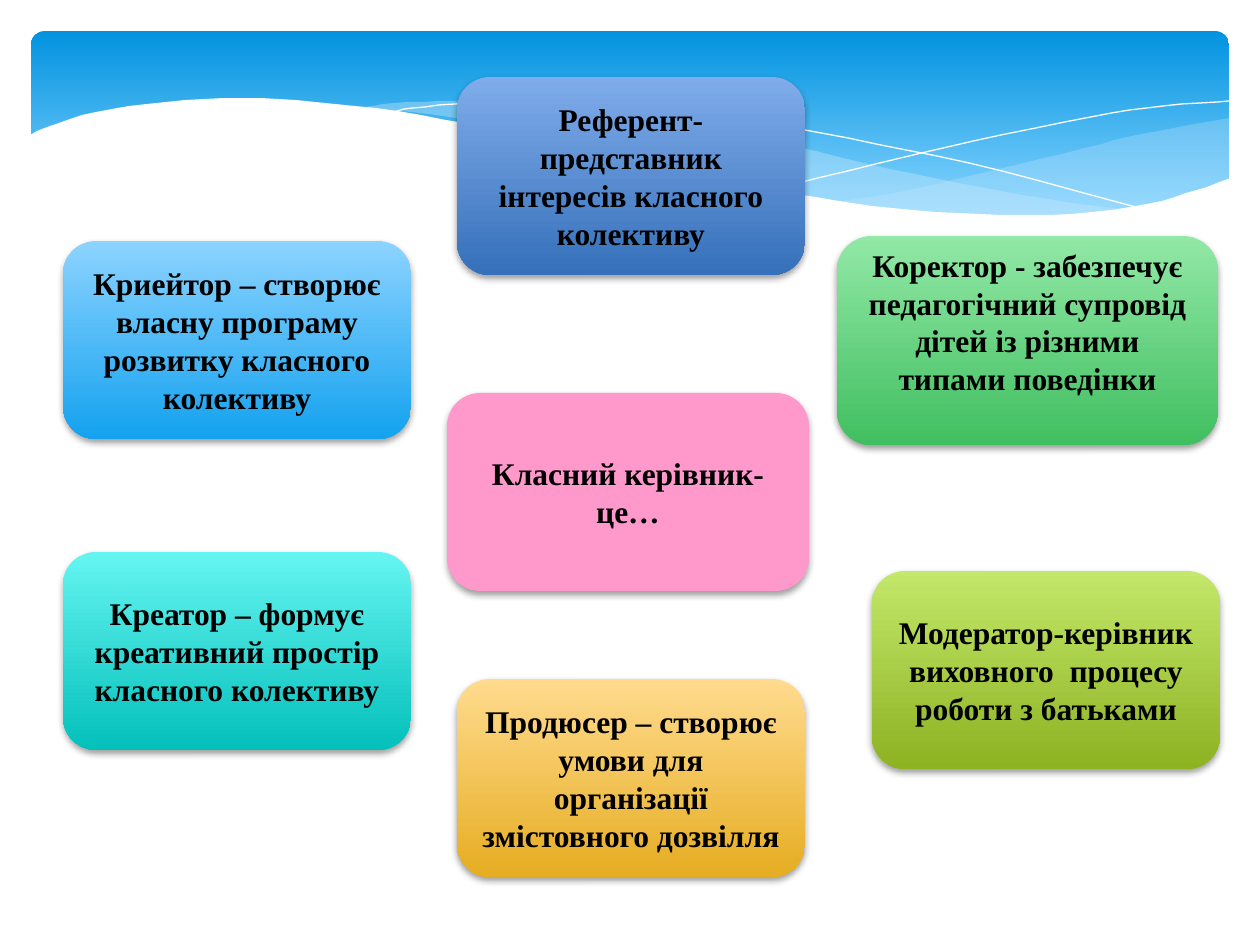
"""Build a slide of six class-teacher roles set around a central card."""
from lxml.etree import SubElement
from pptx import Presentation
from pptx.dml.color import RGBColor as RGB
from pptx.enum.shapes import MSO_SHAPE as SHAPE
from pptx.enum.text import MSO_ANCHOR as ANCHOR, PP_ALIGN as ALIGN
from pptx.oxml.ns import qn
from pptx.util import Pt

PX = 914400 // 126
WIDTH, HEIGHT = 1260, 945
CARD_W, CARD_H = 348, 198
LEFT, MIDDLE = 63, 457
INSET = 6

THEME = {
    "font": {"name": "Times New Roman", "size": Pt(18), "bold": True},
    "text": "000000",
    "white": "FFFFFF",
    "wave": "C6E7FC",
    "sky": ("0293E0", "83D3FE"),
    "blue": ("80ACEA", "3570BA"),
    "green": ("92E8A6", "41BF60"),
    "azure": ("8CD3FF", "14A2EF"),
    "teal": ("65F5F1", "04C0BB"),
    "amber": ("FFDB8E", "E6AD22"),
    "lime": ("C3E86A", "8DB222"),
    "pink": "FF99CC",
}

CARDS = [
    ("Референт-представник інтересів класного колективу",
     (MIDDLE, 77, CARD_W, CARD_H), "blue", INSET),
    ("Коректор - забезпечує педагогічний супровід дітей із різними типами поведінки",
     (837, 236, 381, 209), "green", INSET + 38),
    ("Криейтор – створює власну програму розвитку класного колективу",
     (LEFT, 241, CARD_W, CARD_H), "azure", INSET),
    ("Креатор – формує креативний простір класного колективу",
     (LEFT, 552, CARD_W, CARD_H), "teal", INSET),
    ("Продюсер – створює умови для організації змістовного дозвілля",
     (MIDDLE, 679, CARD_W, CARD_H), "amber", INSET),
    ("Модератор-керівник виховного  процесу роботи з батьками",
     (872, 571, CARD_W, CARD_H), "lime", INSET),
    ("Класний керівник-це…", (447, 393, 362, CARD_H), "pink", INSET),
]

BANNER = (31, 31, 1198, 197)
RIGHT_WAVE = [
    [(1229, 118), (1142, 134), (1085, 148), (982, 173), (889, 194), (833, 202)],
    [(833, 202), (922, 212), (1014, 217), (1100, 215), (1169, 203), (1229, 179)],
]
LONG_WAVE = [
    [(1125, 210), (1017, 194), (890, 169), (793, 146), (699, 126), (616, 112),
     (529, 103), (455, 101), (394, 103), (360, 108)],
    [(360, 108), (456, 118), (566, 146), (668, 170), (757, 188), (857, 206),
     (959, 216), (1043, 218), (1125, 210)],
]
FALLING_LINE = [[(389, 113), (413, 108), (471, 103), (545, 103), (643, 108),
                 (766, 123), (876, 144), (1002, 171), (1143, 209)]]
RISING_LINE = [[(772, 190), (876, 164), (978, 140), (1091, 117), (1164, 106),
                (1229, 101)]]
WHITE_WAVE = [
    [(1231, 178), (1197, 190), (1147, 204), (1071, 214), (980, 214), (892, 208),
     (816, 197), (760, 188), (699, 175), (634, 161), (563, 144), (493, 129),
     (398, 111), (315, 102), (243, 98), (166, 102), (96, 112), (50, 126), (29, 135)],
    [(29, 282), (1231, 282)],
]
WAVES = [
    (RIGHT_WAVE, "wave", 29),
    (LONG_WAVE, "wave", 40),
    (FALLING_LINE, None, None),
    (RISING_LINE, None, None),
    (WHITE_WAVE, "white", 100),
]


def smooth(points, steps=4):
    """Return points along a Catmull-Rom curve through the given ones."""
    ends = [points[0], *points, points[-1]]
    curve = [points[0]]
    for a, b, c, d in zip(ends, ends[1:], ends[2:], ends[3:]):
        for t in (i / steps for i in range(1, steps + 1)):
            curve.append(tuple(
                (2 * q + (r - p) * t + (2 * p - 5 * q + 4 * r - v) * t ** 2
                 + (3 * q - p - 3 * r + v) * t ** 3) / 2
                for p, q, r, v in zip(a, b, c, d)))
    return curve


def paint(sp, colours, last=1.0):
    """Fill a shape with one colour or a downward gradient, without outline."""
    sp.shadow.inherit = False
    sp.line.fill.background()
    if isinstance(colours, str):
        sp.fill.solid()
        sp.fill.fore_color.rgb = RGB.from_string(colours)
        return
    sp.fill.gradient()
    sp.fill.gradient_angle = 270
    for stop, colour, position in zip(sp.fill.gradient_stops, colours, (0, last)):
        stop.color.rgb = RGB.from_string(colour)
        stop.position = position


def add_round_rect(s, box):
    """Add a rounded rectangle at a box given in px."""
    return s.shapes.add_shape(SHAPE.ROUNDED_RECTANGLE, *(v * PX for v in box))


def add_wave(s, curves, colour, opacity):
    """Add a filled wave, or a thin white line when there is no colour."""
    points = [point for curve in curves for point in smooth(curve)]
    builder = s.shapes.build_freeform(*points[0], scale=PX)
    builder.add_line_segments(points[1:], close=colour is not None)
    sp = builder.convert_to_shape()
    if colour:
        paint(sp, THEME[colour])
        rgb = sp.fill._xPr.find(".//" + qn("a:srgbClr"))
        SubElement(rgb, qn("a:alpha"), val=str(opacity * 1000))
    else:
        sp.shadow.inherit = False
        sp.fill.background()
        sp.line.color.rgb = RGB.from_string(THEME["white"])
        sp.line.width = Pt(0)


def add_shadow(sp):
    """Give a shape a soft shadow below it."""
    effects = sp._element.spPr.find(qn("a:effectLst"))
    shadow = SubElement(effects, qn("a:outerShdw"), blurRad=str(Pt(4)),
                        dist=str(Pt(2)), dir="5400000", rotWithShape="0")
    rgb = SubElement(shadow, qn("a:srgbClr"), val="000000")
    SubElement(rgb, qn("a:alpha"), val="38000")


def add_card(s, text, box, colours, bottom):
    """Add a role card with centred bold text."""
    sp = add_round_rect(s, box)
    paint(sp, THEME[colours])
    add_shadow(sp)
    tf = sp.text_frame
    frame = {"word_wrap": True, "vertical_anchor": ANCHOR.MIDDLE,
             "margin_top": INSET * PX, "margin_bottom": bottom * PX}
    for name, value in frame.items():
        setattr(tf, name, value)
    p = tf.paragraphs[0]
    p.alignment = ALIGN.CENTER
    r = p.add_run()
    r.text = text
    for name, value in THEME["font"].items():
        setattr(r.font, name, value)
    r.font.color.rgb = RGB.from_string(THEME["text"])


def main():
    """Build and save the slide."""
    prs = Presentation()
    prs.slide_width, prs.slide_height = WIDTH * PX, HEIGHT * PX
    s = prs.slides.add_slide(prs.slide_layouts[6])
    banner = add_round_rect(s, BANNER)
    banner.adjustments[0] = 0.07
    paint(banner, THEME["sky"], last=0.9)
    for wave in WAVES:
        add_wave(s, *wave)
    for card in CARDS:
        add_card(s, *card)
    prs.save("out.pptx")


if __name__ == "__main__":
    main()
